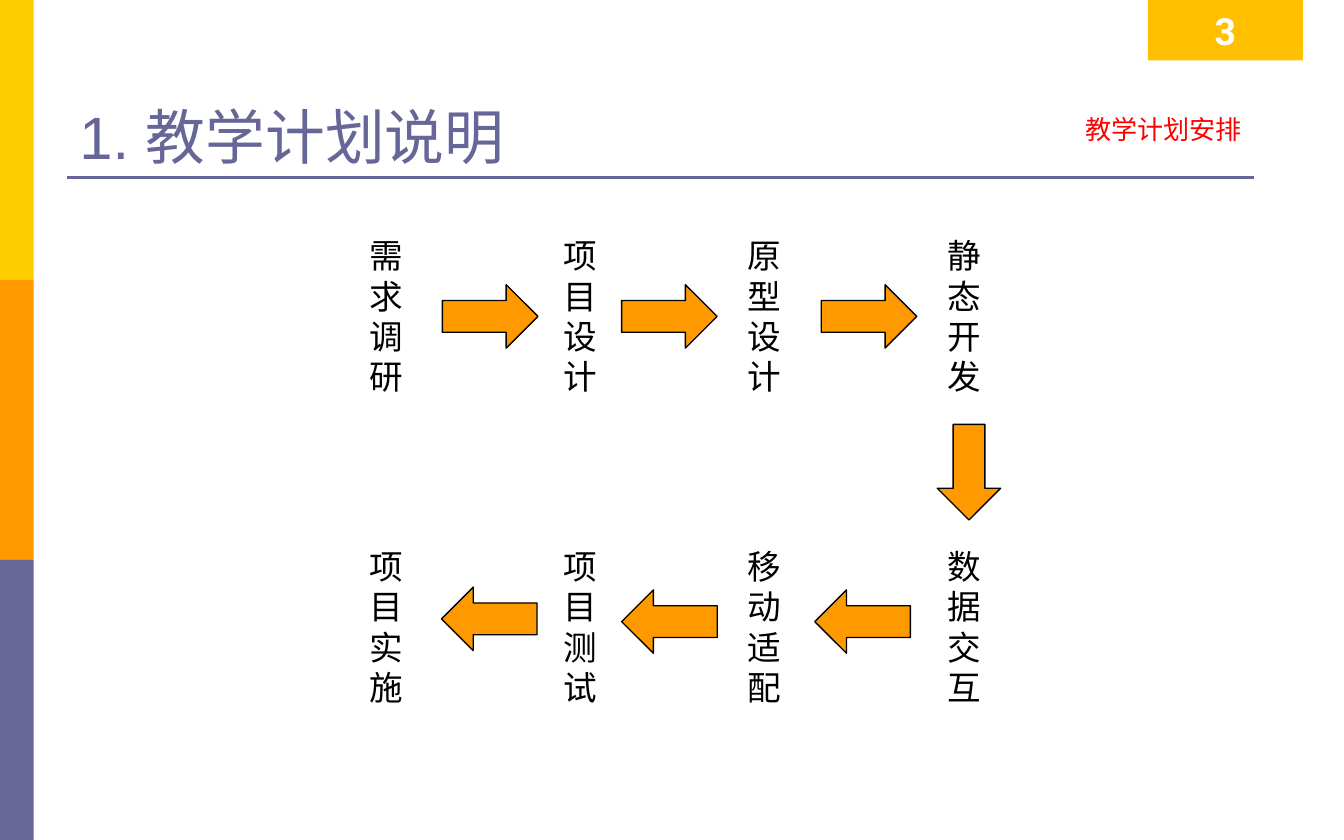
from pptx import Presentation
from pptx.dml.color import RGBColor
from pptx.enum.shapes import MSO_CONNECTOR as CONNECTOR, MSO_SHAPE as SHAPE
from pptx.enum.text import MSO_ANCHOR as ANCHOR, PP_ALIGN as ALIGN
from pptx.oxml.ns import qn
from pptx.util import Pt
from lxml.etree import SubElement

COLORS = {
    "yellow": "FFCC00", "orange": "FF9900", "violet": "666699",
    "amber": "FFC000", "red": "FF0000", "black": "000000", "white": "FFFFFF",
}
LATIN, CJK = "Arial", "Noto Sans CJK SC"
INSET = (6.5, 3)

# Steps run right along the first row and back left along the second
STEP_ROWS = [
    ["需求调研", "项目设计", "原型设计", "静态开发"],
    ["项目实施", "项目测试", "移动适配", "数据交互"],
]
COLUMN_X = [0, 104, 202.5, 309.5]
ROW_Y = [0, 166.5]
ARROW_ROWS = [
    (0, [(46, 30), (142, 30), (249, 30)]),
    (180, [(45.5, 192), (142, 193.5), (245.5, 193.5)]),
    (90, [(302.5, 113.5)]),
]
STEP_SIZE = (32.4, 94)
ARROW_SIZE = (51.2, 34)


def color(name):
    return RGBColor.from_string(COLORS[name])


def write(frame, paragraphs, size, ink, align=ALIGN.LEFT, anchor=ANCHOR.TOP,
          bold=False, wrap=True, inset=INSET, spacing=None):
    """Fill a frame; each paragraph is a list of (text, font) runs."""
    frame.word_wrap = wrap
    frame.vertical_anchor = anchor
    frame.margin_left = frame.margin_right = Pt(inset[0])
    frame.margin_top = frame.margin_bottom = Pt(inset[1])
    for i, runs in enumerate(paragraphs):
        paragraph = frame.add_paragraph() if i else frame.paragraphs[0]
        paragraph.alignment = align
        if spacing:
            paragraph.line_spacing = Pt(spacing)
        for text, font in runs:
            run = paragraph.add_run()
            run.text = text
            run.font.name = font
            run.font.size = Pt(size)
            run.font.bold = bold
            run.font.color.rgb = color(ink)
            east_asian = SubElement(run.font._element, qn("a:ea"))
            east_asian.set("typeface", CJK)


def add_text(slide, box, paragraphs, **style):
    text_box = slide.shapes.add_textbox(*map(Pt, box))
    write(text_box.text_frame, paragraphs, **style)


def add_block(slide, kind, box, fill, outline=None):
    block = slide.shapes.add_shape(kind, *map(Pt, box))
    block.shadow.inherit = False
    block.fill.solid()
    block.fill.fore_color.rgb = color(fill)
    if outline:
        block.line.color.rgb = color(outline)
        block.line.width = Pt(0.75)
    else:
        block.line.fill.background()
    return block


def add_side_band(slide, left, top, width, height):
    part = height / 3
    for i, fill in enumerate(["yellow", "orange", "violet"]):
        add_block(slide, SHAPE.RECTANGLE, (left, top + i * part, width, part), fill)


def add_header(slide, left, top, width, height):
    bottom = top + height
    # Rule under the title
    rule = slide.shapes.add_connector(
        CONNECTOR.STRAIGHT, Pt(left), Pt(bottom), Pt(left + width), Pt(bottom))
    rule.line.color.rgb = color("violet")
    rule.line.width = Pt(1.5)
    SubElement(rule._element.spPr, qn("a:effectLst"))
    # Title and section name
    add_text(slide, (left, top + 20, width, height - 20),
             [[("1. ", LATIN), ("教学计划说明", CJK)]],
             size=32, ink="violet", anchor=ANCHOR.BOTTOM)
    add_text(slide, (left + width - 363, top + 57.5, 363, 22.5),
             [[("教学计划安排", CJK)]], size=14, ink="red", align=ALIGN.RIGHT)
    # Page number
    page_tab = add_block(slide, SHAPE.RECTANGLE,
                         (left + width - 57, top, 83, 32.4), "amber")
    write(page_tab.text_frame, [[("3", "Roboto")]], size=20, ink="white",
          align=ALIGN.CENTER, anchor=ANCHOR.MIDDLE, bold=True)


def add_flow(slide, left, top):
    # Step names, one character a line
    for y, steps in zip(ROW_Y, STEP_ROWS):
        for x, step in zip(COLUMN_X, steps):
            add_text(slide, (left + x, top + y, *STEP_SIZE),
                     [[(character, LATIN)] for character in step],
                     size=18, ink="black", wrap=False, inset=(7.2, 3.6),
                     spacing=21.6)
    # Arrows between the steps
    for angle, places in ARROW_ROWS:
        for x, y in places:
            arrow = add_block(slide, SHAPE.RIGHT_ARROW,
                              (left + x, top + y, *ARROW_SIZE), "orange", "black")
            arrow.rotation = angle


def main():
    deck = Presentation()
    deck.slide_width, deck.slide_height = Pt(720), Pt(450)
    slide = deck.slides.add_slide(deck.slide_layouts[6])
    add_side_band(slide, 0, 0, 18, 450)
    add_header(slide, 36, 0, 636, 95)
    add_flow(slide, 191, 122.5)
    deck.save("out.pptx")


if __name__ == "__main__":
    main()
